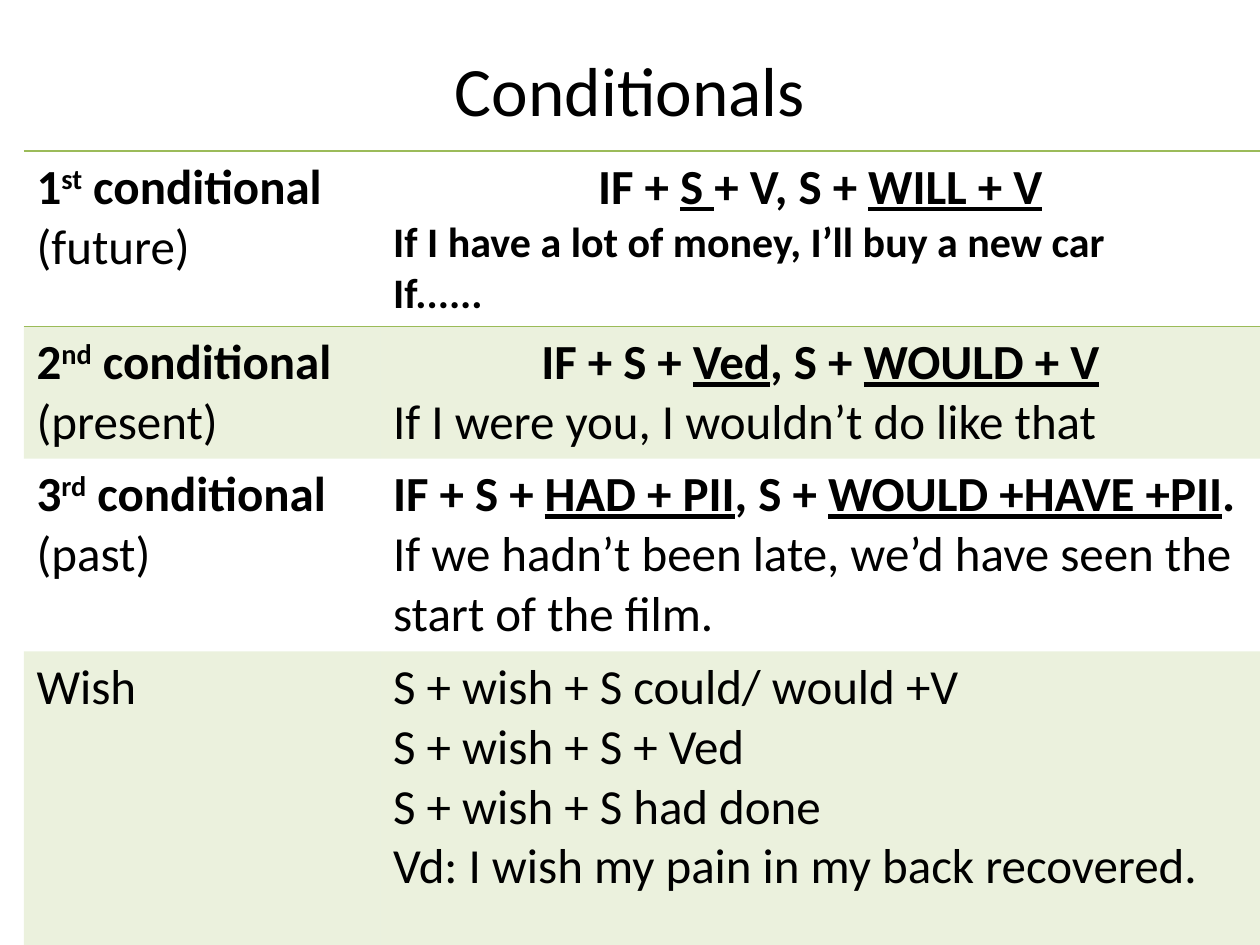
from dataclasses import dataclass

from lxml.etree import SubElement
from pptx import Presentation
from pptx.dml.color import RGBColor
from pptx.enum.text import MSO_ANCHOR as Anchor, PP_ALIGN as Align
from pptx.oxml.ns import qn
from pptx.util import Inches, Pt


@dataclass(frozen=True)
class Theme:
    font: str = "Calibri"
    ink: str = "000000"
    green: str = "9BBB59"
    tint: int = 20
    title: float = 39.6
    body: float = 28
    example: float = 24
    border: float = 1
    plain_table: str = "{2D5ABB26-0587-4C30-8999-92F81FD0307C}"


THEME = Theme()


def add_span(para, text, size=THEME.body, bold=False, underline=False, raised=False):
    span = para.add_run()
    span.text = text
    font = span.font
    font.name, font.size = THEME.font, Pt(size)
    font.bold, font.underline = bold, underline
    font.color.rgb = RGBColor.from_string(THEME.ink)
    if raised:
        font._element.set("baseline", "30000")


def line(*spans, align=Align.LEFT, **style):
    return spans, align, style


def under(text):
    return text, {"underline": True}


def formula(*spans, align=Align.CENTER):
    return line(*spans, align=align, bold=True)


def label(number, ending, time):
    ordinal = line(number, (ending, {"raised": True}), " conditional", bold=True)
    return [ordinal, line(f"({time})")]


def write_lines(frame, lines):
    for index, (spans, align, style) in enumerate(lines):
        para = frame.add_paragraph() if index else frame.paragraphs[0]
        para.alignment = align
        for span in spans:
            text, extra = (span, {}) if isinstance(span, str) else span
            add_span(para, text, **{**style, **extra})


ROWS = [
    (
        label("1", "st", "future"),
        [
            formula("IF + ", under("S "), "+ V, S + ", under("WILL + V")),
            line("If I have a lot of money, I’ll buy a new car",
                 size=THEME.example, bold=True),
            line("If......", size=THEME.example, bold=True),
        ],
    ),
    (
        label("2", "nd", "present"),
        [
            formula("IF + S + ", under("Ved"), ", S + ", under("WOULD + V")),
            line("If I were you, I wouldn’t do like that"),
        ],
    ),
    (
        label("3", "rd", "past"),
        [
            formula("IF + S + ", under("HAD + PII"), ", S + ",
                    under("WOULD +HAVE +PII"), ".", align=Align.LEFT),
            line("If we hadn’t been late, we’d have seen the start of the film."),
        ],
    ),
    (
        [line("Wish")],
        [
            line("S + wish + S could/ would +V"),
            line("S + wish + S + Ved"),
            line("S + wish + S had done"),
            line("Vd: I wish my pain in my back recovered."),
        ],
    ),
]
COLUMN_WIDTHS = [2.83, 6.98]
ROW_HEIGHTS = [1.39, 1.05, 1.53, 3.3]


def add_border(cell, side):
    border = SubElement(cell._tc.get_or_add_tcPr(), qn(f"a:{side}"),
                        w=str(Pt(THEME.border)))
    fill = SubElement(border, qn("a:solidFill"))
    SubElement(fill, qn("a:srgbClr"), val=THEME.green)


def fill_cell(cell, shaded):
    if not shaded:
        cell.fill.background()
        return
    cell.fill.solid()
    cell.fill.fore_color.rgb = RGBColor.from_string(THEME.green)
    color = cell._tc.tcPr.find(f"{qn('a:solidFill')}/{qn('a:srgbClr')}")
    SubElement(color, qn("a:alpha"), val=str(THEME.tint * 1000))


def add_title(page, left, top, width, height):
    box = page.shapes.add_textbox(left, top, width, height)
    frame = box.text_frame
    frame.word_wrap = True
    frame.vertical_anchor = Anchor.MIDDLE
    write_lines(frame, [line("Conditionals", align=Align.CENTER, size=THEME.title)])


def add_conditionals(page, left, top, width, height):
    shape = page.shapes.add_table(len(ROWS), len(COLUMN_WIDTHS),
                                  left, top, width, height)
    table = shape.table
    table.first_row = table.horz_banding = False
    table._tbl.tblPr.find(qn("a:tableStyleId")).text = THEME.plain_table
    for column, share in zip(table.columns, COLUMN_WIDTHS):
        column.width = int(width * share / sum(COLUMN_WIDTHS))
    for row, share in zip(table.rows, ROW_HEIGHTS):
        row.height = int(height * share / sum(ROW_HEIGHTS))

    last = len(ROWS) - 1
    for row_index, contents in enumerate(ROWS):
        for column_index, lines in enumerate(contents):
            cell = table.cell(row_index, column_index)
            write_lines(cell.text_frame, lines)
            if row_index == 0:
                add_border(cell, "lnT")
            if row_index in (0, last):
                add_border(cell, "lnB")
            fill_cell(cell, shaded=row_index % 2 == 1)


def main():
    deck = Presentation()
    deck.slide_width, deck.slide_height = Inches(10), Inches(7.5)
    page = deck.slides.add_slide(deck.slide_layouts[6])
    add_title(page, Inches(0.5), Inches(0.3), Inches(9), Inches(0.81))
    add_conditionals(page, Inches(0.19), Inches(1.2), Inches(9.81), Inches(7.27))
    deck.save("out.pptx")


if __name__ == "__main__":
    main()
